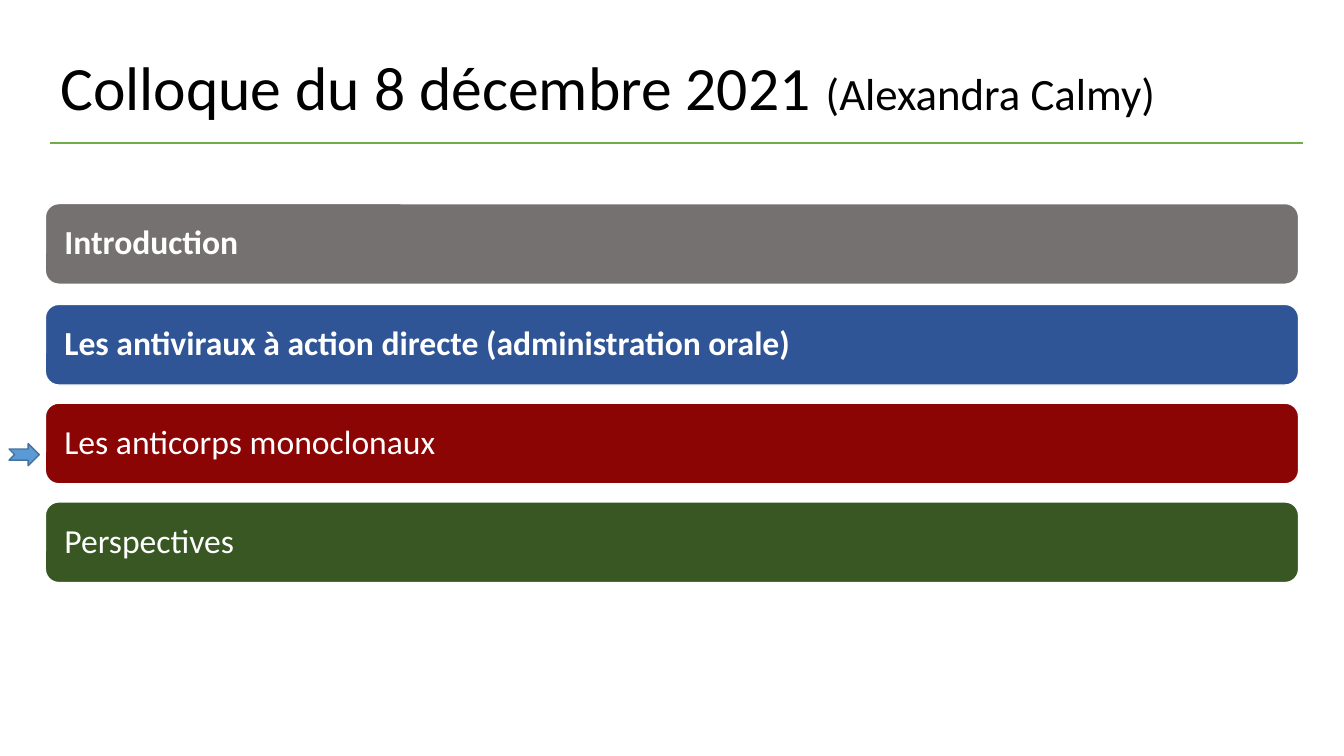
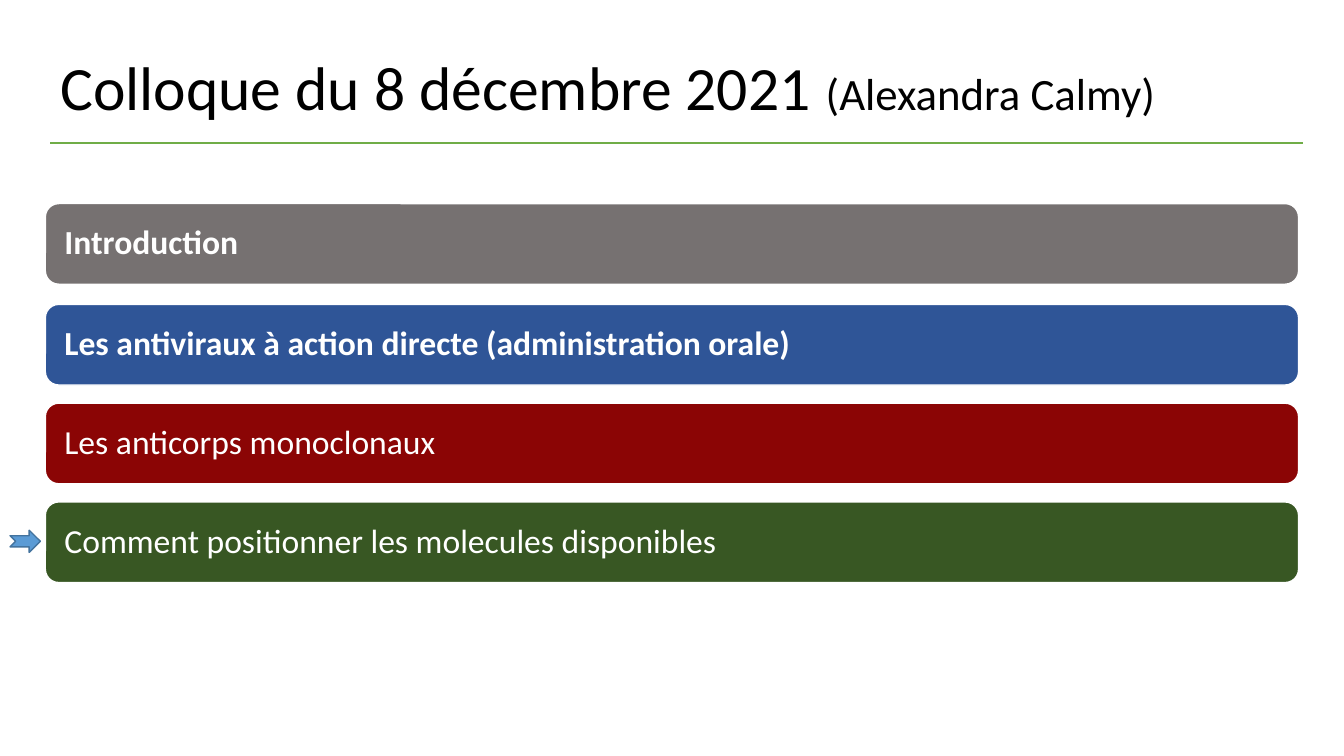
from dataclasses import dataclass

from pptx import Presentation
from pptx.dml.color import RGBColor
from pptx.enum.shapes import MSO_CONNECTOR, MSO_SHAPE
from pptx.enum.text import MSO_ANCHOR, PP_ALIGN
from pptx.util import Pt
from lxml import etree

PX = 9144  # 100 px to the inch
STRAIGHT = MSO_CONNECTOR.STRAIGHT
ROUNDED = MSO_SHAPE.ROUNDED_RECTANGLE
NOTCHED_ARROW = MSO_SHAPE.NOTCHED_RIGHT_ARROW
MIDDLE = MSO_ANCHOR.MIDDLE
LEFT = PP_ALIGN.LEFT
EFFECT_LIST = "{http://schemas.openxmlformats.org/drawingml/2006/main}effectLst"


@dataclass(frozen=True)
class Theme:
    font: str = "Calibri"
    title: str = "000000"
    rule: str = "70AD47"
    white: str = "FFFFFF"
    grey: str = "767171"
    blue: str = "2F5597"
    red: str = "8B0505"
    green: str = "385723"
    arrow: str = "5B9BD5"
    arrow_line: str = "43739E"
    title_size: int = 44
    speaker_size: int = 32
    topic_size: int = 24


THEME = Theme()

# Agenda: top, fill, bold; the last topic's wording varies by slide
BARS = [
    (202, THEME.grey, True),
    (302, THEME.blue, True),
    (400, THEME.red, False),
    (498, THEME.green, False),
]
TOPICS = [
    "Introduction",
    "Les antiviraux à action directe (administration orale)",
    "Les anticorps monoclonaux",
]
TITLE = [
    ("Colloque du 8 décembre 2021 ", THEME.title_size),
    ("(Alexandra Calmy)", THEME.speaker_size),
]
# Last topic, then left and top of the arrow marking the current topic
SLIDES = [
    ("Perspectives", 9, 440),
    ("Comment positionner les molecules disponibles", 10, 526),
]


def write(shape, runs, color, bold=False):
    frame = shape.text_frame
    frame.word_wrap = True
    frame.vertical_anchor = MIDDLE
    para = frame.paragraphs[0]
    para.alignment = LEFT
    para.line_spacing = 0.9
    for text, size in runs:
        span = para.add_run()
        span.text = text
        span.font.name = THEME.font
        span.font.size = Pt(size)
        span.font.bold = bold
        span.font.color.rgb = RGBColor.from_string(color)
    return frame


def add_filled(page, kind, left, top, width, height, fill, line):
    shape = page.shapes.add_shape(kind, left * PX, top * PX, width * PX, height * PX)
    shape.shadow.inherit = False
    shape.fill.solid()
    shape.fill.fore_color.rgb = RGBColor.from_string(fill)
    shape.line.color.rgb = RGBColor.from_string(line)
    shape.line.width = Pt(1)
    return shape


deck = Presentation()
deck.slide_width = 1333 * PX
deck.slide_height = 750 * PX

for last_topic, arrow_left, arrow_top in SLIDES:
    page = deck.slides.add_slide(deck.slide_layouts[6])

    # Title and the rule under it
    rule = page.shapes.add_connector(STRAIGHT, 50 * PX, 142 * PX, 1292 * PX, 142 * PX)
    rule.line.color.rgb = RGBColor.from_string(THEME.rule)
    rule.line.width = Pt(1.75)
    etree.SubElement(rule._element.spPr, EFFECT_LIST)
    box = page.shapes.add_textbox(50 * PX, 42 * PX, 1243 * PX, 95 * PX)
    write(box, TITLE, THEME.title)

    # Agenda bars
    for (top, fill, bold), topic in zip(BARS, TOPICS + [last_topic]):
        bar = add_filled(page, ROUNDED, 45, top, 1243, 80, fill, THEME.white)
        frame = write(bar, [(topic, THEME.topic_size)], THEME.white, bold)
        frame.margin_left = frame.margin_right = 15 * PX
        frame.margin_top = frame.margin_bottom = 15 * PX

    # Current topic marker
    add_filled(page, NOTCHED_ARROW, arrow_left, arrow_top, 30, 22,
               THEME.arrow, THEME.arrow_line)

deck.save("out.pptx")
